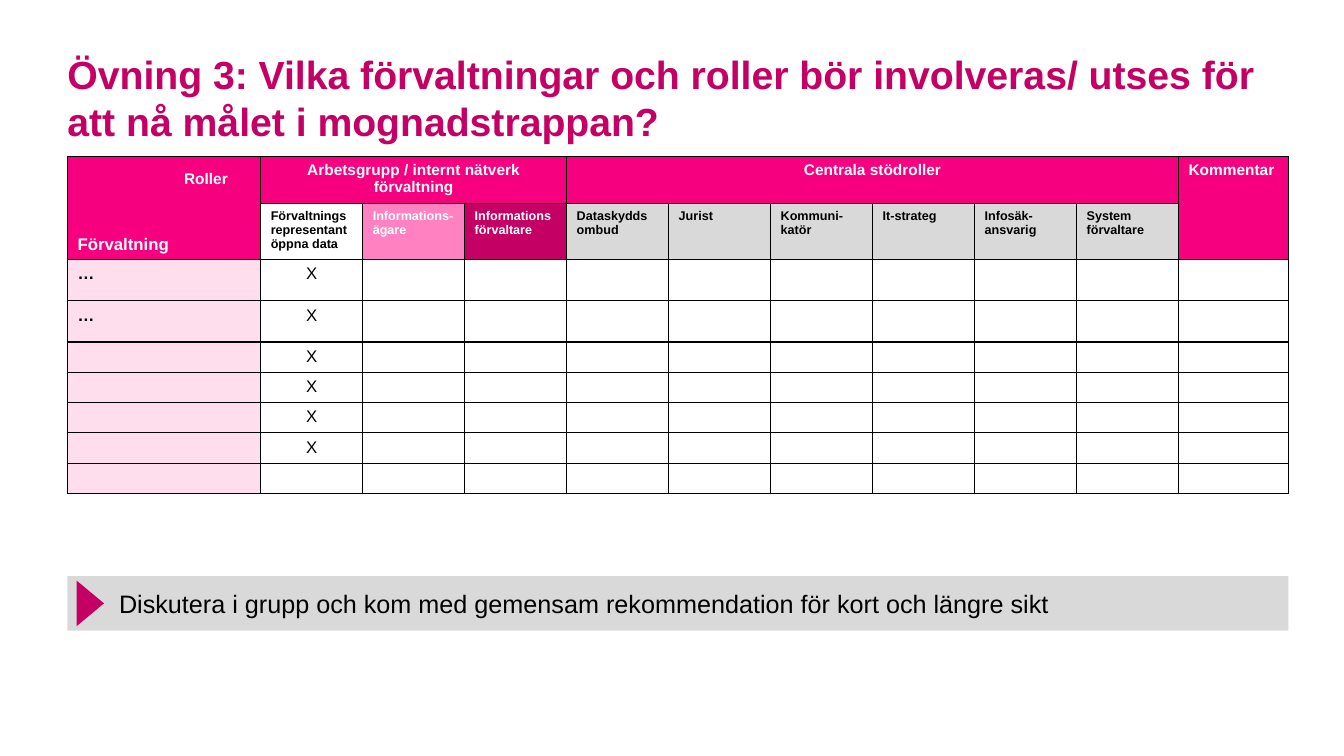
from dataclasses import dataclass

from lxml.etree import SubElement
from pptx import Presentation
from pptx.dml.color import RGBColor
from pptx.enum.shapes import MSO_SHAPE
from pptx.enum.text import MSO_ANCHOR, PP_ALIGN
from pptx.oxml.ns import qn
from pptx.util import Cm, Pt

BLACK, WHITE, GREY = "000000", "FFFFFF", "D9D9D9"
PINK, LIGHT_PINK, PALE_PINK, DARK_PINK = "F60080", "FF81C1", "FEDEED", "C40064"

LEFT, WIDTH = 1.7, 30.77
COLUMN_WIDTHS = [4.87] + [2.57] * 9 + [2.77]
ROW_HEIGHTS = [1.14, 1.32, 1.04, 1.04] + [0.73] * 5


@dataclass
class TableCell:
    row: int
    col: int
    text: str
    fill: str = WHITE
    color: str = BLACK
    size: int = 9
    bold: bool = True
    align: PP_ALIGN = PP_ALIGN.LEFT
    anchor: MSO_ANCHOR = MSO_ANCHOR.TOP
    rows: int = 1
    cols: int = 1


@dataclass
class Block:
    shape: MSO_SHAPE
    left: float
    top: float
    width: float
    height: float
    fill: str
    rotation: int = 0


HEADINGS = [
    TableCell(0, 0, "Förvaltning", PINK, WHITE, 12, anchor=MSO_ANCHOR.BOTTOM, rows=2),
    TableCell(0, 1, "Arbetsgrupp / internt nätverk förvaltning", PINK, WHITE, 11,
              align=PP_ALIGN.CENTER, cols=3),
    TableCell(0, 4, "Centrala stödroller", PINK, WHITE, 11, align=PP_ALIGN.CENTER, cols=6),
    TableCell(0, 10, "Kommentar", PINK, WHITE, 11, rows=2),
    TableCell(1, 1, "Förvaltnings\nrepresentant öppna data"),
    TableCell(1, 2, "Informations- ägare", LIGHT_PINK, WHITE),
    TableCell(1, 3, "Informations förvaltare", DARK_PINK, WHITE),
]
SUPPORT_ROLES = ["Dataskydds ombud", "Jurist", "Kommuni-katör", "It-strateg",
                 "Infosäk-ansvarig", "System förvaltare"]
BAR = Block(MSO_SHAPE.RECTANGLE, LEFT, 14.52, WIDTH, 1.37, GREY)
MARKER = Block(MSO_SHAPE.ISOSCELES_TRIANGLE, 1.7, 14.86, 1.15, 0.69, DARK_PINK, 90)


def rgb(value: str) -> RGBColor:
    return RGBColor.from_string(value)


def write(tf, text: str, size: int, color: str, bold: bool = False,
          align: PP_ALIGN = PP_ALIGN.LEFT) -> None:
    for i, line in enumerate(text.split("\n")):
        p = tf.paragraphs[0] if i == 0 else tf.add_paragraph()
        p.alignment = align
        if not line:
            SubElement(p._p, qn("a:endParaRPr"), sz=str(size * 100))
            continue
        r = p.add_run()
        r.text = line
        for name, value in {"name": "Arial", "size": Pt(size), "bold": bold}.items():
            setattr(r.font, name, value)
        r.font.color.rgb = rgb(color)


def add_text(slide, left: float, top: float, width: float, height: float,
             text: str, size: int, color: str, margins: dict) -> None:
    tf = slide.shapes.add_textbox(Cm(left), Cm(top), Cm(width), Cm(height)).text_frame
    tf.word_wrap = True
    for name, value in margins.items():
        setattr(tf, name, value)
    write(tf, text, size, color, True)


def add_block(slide, b: Block):
    sp = slide.shapes.add_shape(b.shape, Cm(b.left), Cm(b.top), Cm(b.width), Cm(b.height))
    sp.shadow.inherit = False
    sp.rotation = b.rotation
    sp.fill.solid()
    sp.fill.fore_color.rgb = rgb(b.fill)
    sp.line.fill.background()
    return sp


def style_cell(cell, fill: str) -> None:
    tc_pr = cell._tc.get_or_add_tcPr()
    for side in ("lnL", "lnR", "lnT", "lnB"):
        ln = SubElement(tc_pr, qn(f"a:{side}"), w=str(Pt(1)))
        SubElement(SubElement(ln, qn("a:solidFill")), qn("a:srgbClr"), val=BLACK)
    cell.fill.solid()
    cell.fill.fore_color.rgb = rgb(fill)


def add_role_table(slide) -> None:
    n_rows, n_cols = len(ROW_HEIGHTS), len(COLUMN_WIDTHS)
    table = slide.shapes.add_table(n_rows, n_cols, Cm(LEFT), Cm(3.95), Cm(WIDTH),
                                   Cm(sum(ROW_HEIGHTS))).table
    table.first_row = table.horz_banding = False
    for column, width in zip(table.columns, COLUMN_WIDTHS):
        column.width = Cm(width)
    for row, height in zip(table.rows, ROW_HEIGHTS):
        row.height = Cm(height)

    contents = HEADINGS + [TableCell(1, col, role, GREY)
                           for col, role in enumerate(SUPPORT_ROLES, 4)]
    for row in range(2, n_rows):
        contents.append(TableCell(row, 0, "…" if row < 4 else "", PALE_PINK, size=12))
        contents.append(TableCell(row, 1, "X" if row < n_rows - 1 else "", size=12,
                                  bold=False, align=PP_ALIGN.CENTER))
        contents += [TableCell(row, col, "") for col in range(2, n_cols)]

    for c in contents:
        for row in range(c.row, c.row + c.rows):
            for col in range(c.col, c.col + c.cols):
                style_cell(table.cell(row, col), c.fill)
        cell = table.cell(c.row, c.col)
        if c.rows * c.cols > 1:
            cell.merge(table.cell(c.row + c.rows - 1, c.col + c.cols - 1))
        cell.vertical_anchor = c.anchor
        write(cell.text_frame, c.text, c.size, c.color, c.bold, c.align)


def main() -> None:
    prs = Presentation()
    prs.slide_width, prs.slide_height = Cm(33.87), Cm(19.05)
    slide = prs.slides.add_slide(prs.slide_layouts[6])

    no_margins = {f"margin_{side}": 0 for side in ("left", "top", "right", "bottom")}
    add_text(slide, LEFT, 1.27, 30.48, 2.31,
             "Övning 3: Vilka förvaltningar och roller bör involveras/ utses för "
             "att nå målet i mognadstrappan?", 28, DARK_PINK, no_margins)

    tf = add_block(slide, BAR).text_frame
    for name, value in {"word_wrap": True, "margin_left": Cm(1.3),
                        "vertical_anchor": MSO_ANCHOR.MIDDLE}.items():
        setattr(tf, name, value)
    write(tf, "Diskutera i grupp och kom med gemensam rekommendation för kort och längre sikt",
          18, BLACK)
    add_block(slide, MARKER)

    add_role_table(slide)
    add_text(slide, 4.39, 4.14, 2.16, 0.74, "Roller", 11, WHITE, {})
    prs.save("out.pptx")


if __name__ == "__main__":
    main()
